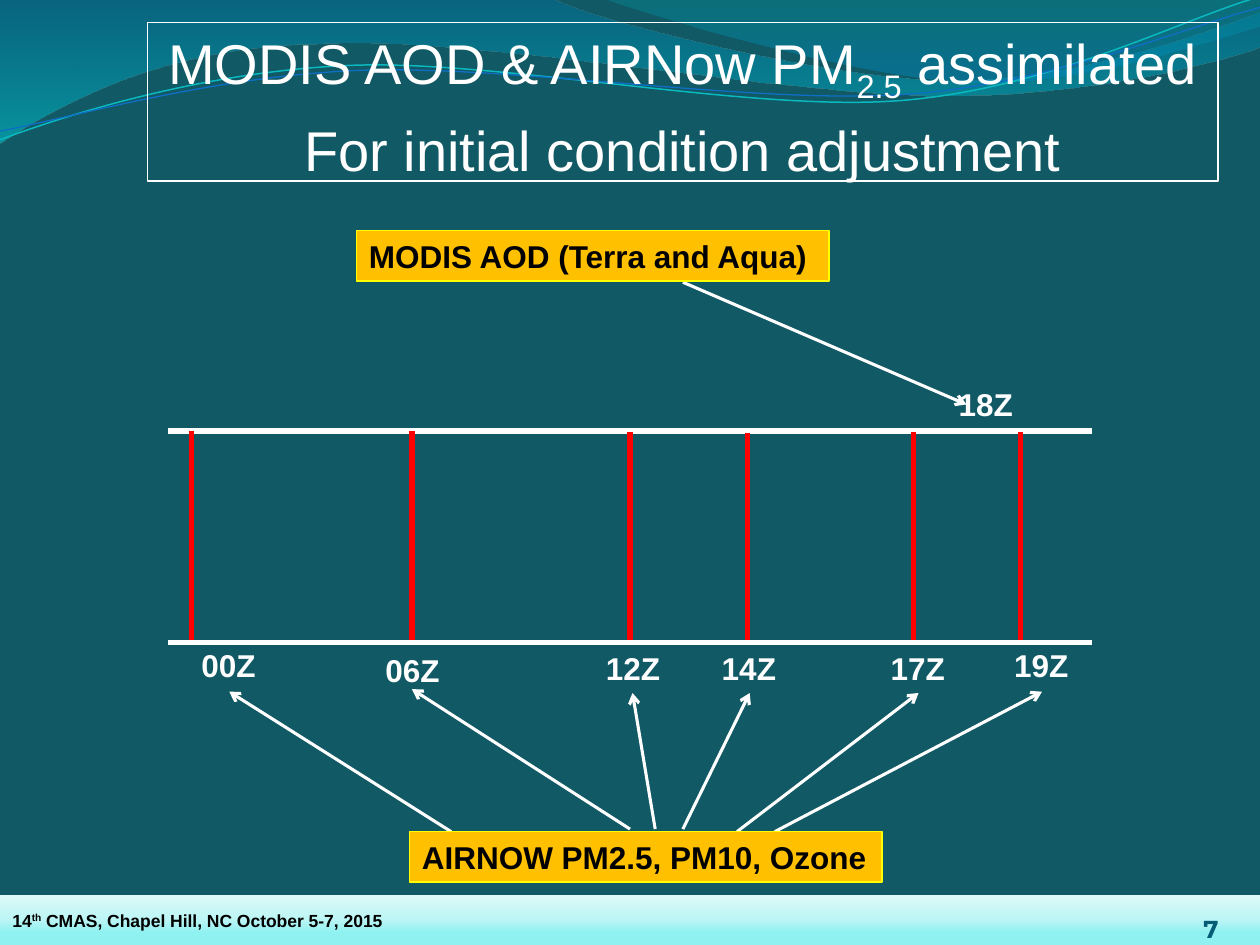
import lxml.etree
import pptx
import pptx.dml.color
import pptx.enum.shapes
import pptx.enum.text
import pptx.oxml
import pptx.oxml.ns
import pptx.util

EMU_PER_PX = 9144
THEME = {
    "background": "115964", "white": "FFFFFF", "black": "000000",
    "red": "FF0000", "orange": "FFC000", "yellow": "FFFF00",
    "number": "045C75", "teal": "0AB8BF", "blue": "0F6FC6",
    "font": "Arial", "number_font": "Montserrat",
    "title": 32, "label": 18, "number_size": 14, "footer": 10,
    "footer_stops": [(0, "90F1F1", 100), (25, "90F1F1", 100),
                     (50, "BCF5F5", 100), (100, "DFF9F9", 100)],
    "wide_wave_stops": [(0, "0074A1", 45), (100, "00C6CF", 55)],
    "right_wave_stops": [(0, "00A1A9", 30), (80, "008BBF", 45)],
}
rgb = pptx.dml.color.RGBColor.from_string
qn = pptx.oxml.ns.qn
ALIGN = pptx.enum.text.PP_ALIGN
ANCHOR = pptx.enum.text.MSO_ANCHOR
FIT = pptx.enum.text.MSO_AUTO_SIZE
RECTANGLE = pptx.enum.shapes.MSO_SHAPE.RECTANGLE

deck = pptx.Presentation()
deck.slide_width = 1000 * EMU_PER_PX
deck.slide_height = 750 * EMU_PER_PX
page = deck.slides.add_slide(deck.slide_layouts[6])
page.background.fill.solid()
page.background.fill.fore_color.rgb = rgb(THEME["background"])


def paint_gradient(shape, stops, angle):
    shape.fill.gradient()
    shape.fill.gradient_angle = 0
    gradient = shape._element.spPr.find(qn("a:gradFill"))
    gradient.find(qn("a:lin")).set("ang", str(angle * 60000))
    stop_list = gradient.find(qn("a:gsLst"))
    for old_stop in list(stop_list):
        stop_list.remove(old_stop)
    for position, color, opacity in stops:
        stop = lxml.etree.SubElement(stop_list, qn("a:gs"), pos=str(position * 1000))
        tint = lxml.etree.SubElement(stop, qn("a:srgbClr"), val=color)
        if opacity < 100:
            lxml.etree.SubElement(tint, qn("a:alpha"), val=str(opacity * 1000))


def add_text(box, paragraphs, size, color, bold=True, font=THEME["font"],
             align=ALIGN.LEFT, anchor=ANCHOR.TOP, wrap=False,
             fit=FIT.SHAPE_TO_FIT_TEXT):
    frame = box.text_frame
    frame.word_wrap = wrap
    frame.auto_size = fit
    frame.vertical_anchor = anchor
    for index, runs in enumerate(paragraphs):
        para = frame.paragraphs[0] if index == 0 else frame.add_paragraph()
        para.alignment = align
        if index:
            para.space_before = pptx.util.Pt(6)
        for text, baseline in runs:
            span = para.add_run()
            span.text = text
            span.font.name = font
            span.font.size = pptx.util.Pt(size)
            span.font.bold = bold
            span.font.color.rgb = rgb(color)
            if baseline:
                span._r.get_or_add_rPr().set("baseline", str(baseline * 1000))


footer_band = page.shapes.add_shape(
    RECTANGLE, *[value * EMU_PER_PX for value in (0, 710, 1000, 40)])
footer_band.shadow.inherit = False
footer_band.line.fill.background()
paint_gradient(footer_band, THEME["footer_stops"], 270)

waves = [
    ([(0, 0), (440, 0), (476, 18, 664, 64, 758, 64), (853, 64, 958, 26, 1000, 10),
      (1001, 37), (983, 45, 870, 77, 746, 76), (622, 76, 382, 29, 257, 35),
      (129, 36, 46, 84, -1, 114), (0, 0)], THEME["wide_wave_stops"], None, 0),
    ([(479, -1), (509, 11, 682, 62, 769, 65), (856, 69, 961, 32, 1000, 21),
      (1000, 0), (479, -1)], THEME["right_wave_stops"], None, 0),
    ([(0, 111), (48, 93, 158, 57, 277, 52), (395, 47, 593, 89, 713, 80),
      (833, 71, 938, 15, 998, -2)], None, THEME["teal"], 0.85),
    ([(0, 104), (47, 96, 164, 61, 283, 56), (403, 51, 597, 83, 717, 75),
      (836, 67, 941, 21, 1000, 6)], None, THEME["blue"], 0.75),
]
for segments, stops, line_color, line_width in waves:
    points = [(segment[i] * EMU_PER_PX, segment[i + 1] * EMU_PER_PX)
              for segment in segments for i in range(0, len(segment), 2)]
    builder = page.shapes.build_freeform(*points[0])
    builder.add_line_segments(points[1:], close=stops is not None)
    wave = builder.convert_to_shape()
    steps = iter(list(wave._element.spPr.iter(qn("a:lnTo"))))
    for segment in segments[1:]:
        step = next(steps)
        if len(segment) == 6:
            curve = pptx.oxml.parse_xml(
                f'<a:cubicBezTo {pptx.oxml.ns.nsdecls("a")}/>')
            step.addprevious(curve)
            for control in (step, next(steps), next(steps)):
                curve.append(control[0])
                control.getparent().remove(control)
    wave.shadow.inherit = False
    if stops:
        paint_gradient(wave, stops, 90)
        wave.line.fill.background()
    else:
        wave.fill.background()
        wave.line.color.rgb = rgb(line_color)
        wave.line.width = pptx.util.Pt(line_width)

title = page.shapes.add_shape(
    RECTANGLE, *[value * EMU_PER_PX for value in (117, 18, 850, 126)])
title.shadow.inherit = False
title.fill.background()
title.line.color.rgb = rgb(THEME["white"])
title.line.width = pptx.util.Pt(1)
add_text(title, [[("MODIS AOD & AIRNow PM", 0), ("2.5", -25), (" assimilated", 0)],
                 [("For initial condition adjustment", 0)]],
         THEME["title"], THEME["white"], bold=False, align=ALIGN.CENTER)

rails = [(133, y, 867, y) for y in (342, 510)]
hour_bars = [(152, 342, 508), (327, 342, 508), (500, 343, 510),
             (593, 344, 511), (725, 343, 510), (810, 343, 510)]
arrows = [(358, 660, 182, 549), (500, 658, 327, 547), (520, 658, 502, 550),
          (542, 658, 595, 550), (585, 660, 729, 550), (615, 660, 827, 549),
          (542, 224, 767, 321)]
lines = [(rails[0], THEME["white"], 3, False)]
lines += [((x, top, x, bottom), THEME["red"], 3, False) for x, top, bottom in hour_bars]
lines += [(rails[1], THEME["white"], 3, False)]
lines += [(ends, THEME["white"], 1.75, True) for ends in arrows]
for ends, color, width, has_head in lines:
    line = page.shapes.add_connector(
        pptx.enum.shapes.MSO_CONNECTOR.STRAIGHT, *[value * EMU_PER_PX for value in ends])
    line.line.color.rgb = rgb(color)
    line.line.width = pptx.util.Pt(width)
    if has_head:
        lxml.etree.SubElement(line.line._get_or_add_ln(), qn("a:tailEnd"), type="arrow")
    lxml.etree.SubElement(line._element.spPr, qn("a:effectLst"))

for left, top, source in [(283, 183, "MODIS AOD (Terra and Aqua)"),
                          (325, 660, "AIRNOW PM2.5, PM10, Ozone")]:
    box = page.shapes.add_shape(
        RECTANGLE, *[value * EMU_PER_PX for value in (left, top, 375, 40)])
    box.shadow.inherit = False
    box.fill.solid()
    box.fill.fore_color.rgb = rgb(THEME["orange"])
    box.line.color.rgb = rgb(THEME["yellow"])
    box.line.width = pptx.util.Pt(0.75)
    add_text(box, [[(source, 0)]], THEME["label"], THEME["black"], wrap=True)

for left, top, hour in [(150, 508, "00Z"), (296, 512, "06Z"), (471, 510, "12Z"),
                        (563, 510, "14Z"), (697, 510, "17Z"), (795, 508, "19Z"),
                        (751, 301, "18Z")]:
    label = page.shapes.add_textbox(
        *[value * EMU_PER_PX for value in (left, top, 64, 40)])
    add_text(label, [[(hour, 0)]], THEME["label"], THEME["white"])

footer = page.shapes.add_textbox(*[value * EMU_PER_PX for value in (0, 717, 325, 27)])
add_text(footer, [[("14", 0), ("th", 30), (" CMAS, Chapel Hill, NC October 5-7, 2015", 0)]],
         THEME["footer"], THEME["black"], wrap=True)

number = page.shapes.add_textbox(*[value * EMU_PER_PX for value in (955, 709, 33, 40)])
number.text_frame.margin_left = number.text_frame.margin_right = 0
number.text_frame.margin_top = number.text_frame.margin_bottom = 0
add_text(number, [[("7", 0)]], THEME["number_size"], THEME["number"],
         font=THEME["number_font"], anchor=ANCHOR.BOTTOM, wrap=True, fit=FIT.NONE)

deck.save("out.pptx")
